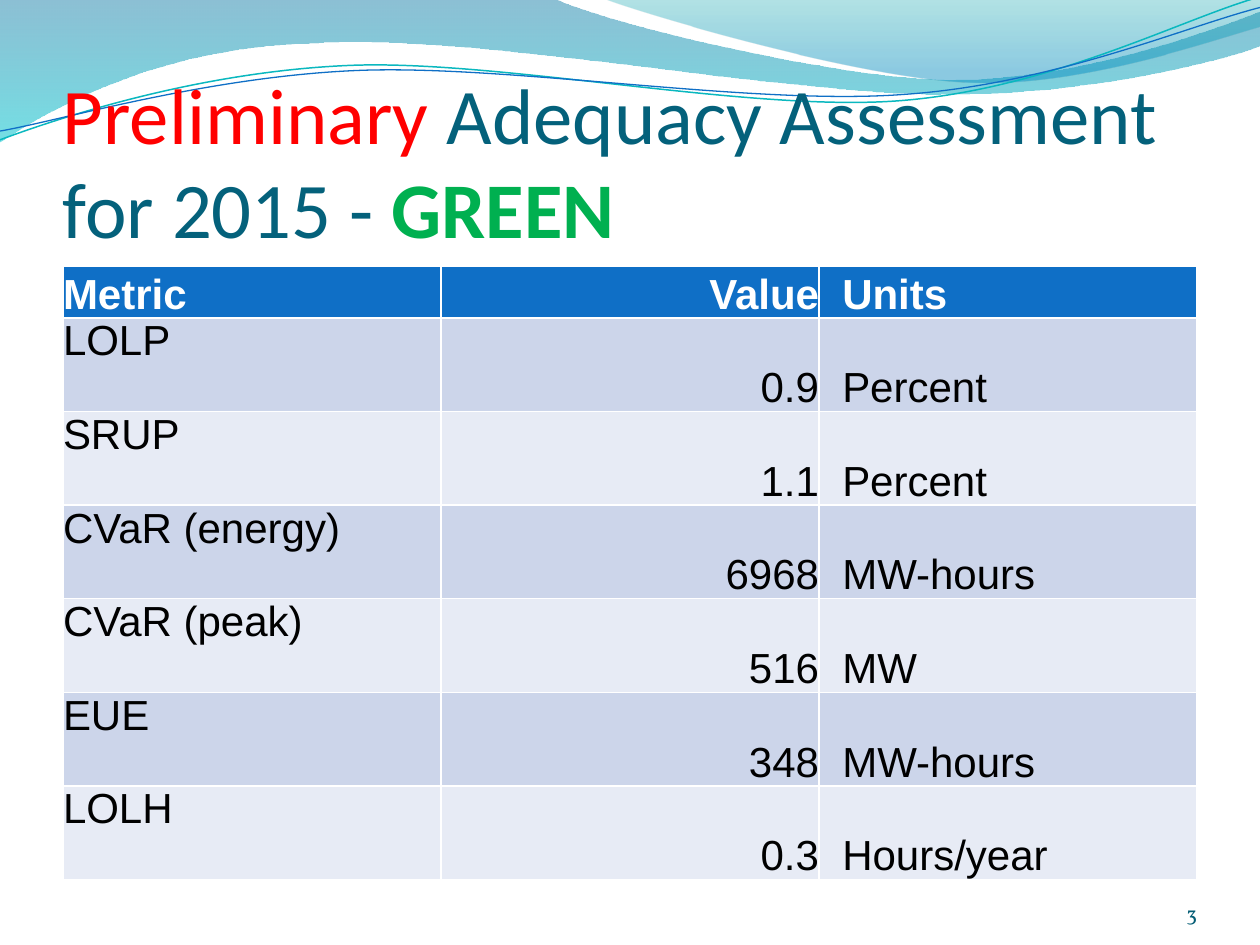
from math import cos, radians, sin

from lxml import etree
from pptx import Presentation
from pptx.dml.color import RGBColor
from pptx.enum.text import MSO_ANCHOR, PP_ALIGN
from pptx.oxml.ns import qn
from pptx.util import Pt

TOP, BOTTOM = MSO_ANCHOR.TOP, MSO_ANCHOR.BOTTOM
LEFT, RIGHT = PP_ALIGN.LEFT, PP_ALIGN.RIGHT
TILT = -2.7

COLORS = {
    "white": "FFFFFF", "black": "000000", "red": "FF0000", "green": "00B050",
    "title": "04617B", "number": "045D75", "head": "0F6FC6",
    "odd": "CCD5EA", "even": "E7EBF5", "teal": "0AB8BF",
    "deep": "0074A1", "aqua": "00C6CF", "sea": "00A1A9", "sky": "008BBF",
}

# Outlines: a start point, then lines (2 numbers) and Bezier curves (6 numbers).
WIDE = [(0, 0), (316.8, -0.7),
        (342.7, 12.2, 478.1, 45.4, 545.8, 45.4),
        (614.2, 45.4, 689.8, 18.7, 720, 6.5), (720.7, 25.9),
        (707.8, 31.7, 626.4, 54.7, 537.1, 54),
        (447.8, 54, 275, 20.2, 185, 24.5),
        (92.9, 25.9, 33.1, 59.8, -0.7, 81.4)]
SMALL = [(344.9, -0.7),
         (366.5, 7.9, 491, 44.6, 553.7, 46.8),
         (616.3, 49.7, 691.9, 23, 720, 15.1), (720, 0)]
UPPER = [(0, 79.9),
         (34.6, 67, 113.8, 41, 199.4, 37.4),
         (284.4, 33.8, 427, 64.1, 513.4, 57.6),
         (599.8, 51.1, 675.4, 10.8, 718.6, -1.4)]
LOWER = [(0, 74.9),
         (33.8, 69.1, 118.1, 43.9, 203.8, 40.3),
         (290.2, 36.7, 429.8, 60.5, 516.2, 54),
         (601.9, 48.2, 677.5, 15.1, 720, 4.3)]

ROWS = [
    ("Metric", "Value", "Units"),
    ("LOLP", "0.9", "Percent"),
    ("SRUP", "1.1", "Percent"),
    ("CVaR (energy)", "6968", "MW-hours"),
    ("CVaR (peak)", "516", "MW"),
    ("EUE", "348", "MW-hours"),
    ("LOLH", "0.3", "Hours/year"),
]


def rgb(name):
    return RGBColor.from_string(COLORS[name])


def level(path, pivot):
    """Turn an outline back by the tilt, so that the shape can carry it."""
    c, s = cos(radians(-TILT)), sin(radians(-TILT))
    px, py = pivot

    def turn(x, y):
        x, y = x - px, y - py
        return px + x * c - y * s, py + x * s + y * c

    return [sum((turn(*part[i:i + 2]) for i in range(0, len(part), 2)), ())
            for part in path]


def add_path(slide, path, close):
    """Lay all points as lines, then join each group of three into a curve."""
    dots = [(Pt(part[i]), Pt(part[i + 1]))
            for part in path for i in range(0, len(part), 2)]
    pen = slide.shapes.build_freeform(*dots[0], scale=1.0)
    pen.add_line_segments(dots[1:], close=close)
    shape = pen.convert_to_shape()
    shape.shadow.inherit = False
    lines = iter(list(shape._element.iter(qn("a:lnTo"))))
    for part in path[1:]:
        first = next(lines)
        if len(part) == 6:
            first.tag = qn("a:cubicBezTo")
            for line in (next(lines), next(lines)):
                first.append(line[0])
                line.getparent().remove(line)
    return shape


def add_band(slide, path, stops):
    """Draw a filled wave; each stop is a position, a colour and an opacity."""
    shape = add_path(slide, path, True)
    shape.line.fill.background()
    fill = shape.fill
    fill.gradient()
    fill.gradient_angle = 270
    for stop, (place, color, _) in zip(fill.gradient_stops, stops):
        stop.position = place
        stop.color.rgb = rgb(color)
    tags = shape._element.spPr.iter(qn("a:srgbClr"))
    for tag, (_, _, alpha) in zip(tags, stops):
        etree.SubElement(tag, qn("a:alpha"), val=str(alpha * 1000))


def add_wave(slide, path, pivot, color, width):
    shape = add_path(slide, level(path, pivot), False)
    shape.rotation = TILT
    shape.fill.background()
    shape.line.color.rgb = rgb(color)
    shape.line.width = Pt(width)


def put_text(frame, text, size, font, color, bold=False, align=LEFT):
    """Append a run to the frame's first paragraph."""
    para = frame.paragraphs[0]
    para.alignment = align
    run = para.add_run()
    run.text = text
    run.font.size = Pt(size)
    run.font.name = font
    run.font.bold = bold
    run.font.color.rgb = rgb(color)


def add_box(slide, left, top, width, height, inset=0):
    box = slide.shapes.add_textbox(Pt(left), Pt(top), Pt(width), Pt(height))
    frame = box.text_frame
    frame.word_wrap = True
    frame.vertical_anchor = BOTTOM
    frame.margin_left = frame.margin_right = frame.margin_bottom = 0
    frame.margin_top = Pt(inset)
    return frame


def add_grid(slide, left, top, width, head, body):
    count, cols = len(ROWS), len(ROWS[0])
    high = head + body * (count - 1)
    table = slide.shapes.add_table(
        count, cols, Pt(left), Pt(top), Pt(width), Pt(high)).table
    for r, texts in enumerate(ROWS):
        table.rows[r].height = Pt(body if r else head)
        shade = ("even", "odd")[r % 2] if r else "head"
        for c, text in enumerate(texts):
            cell = table.cell(r, c)
            cell.margin_right = cell.margin_top = cell.margin_bottom = 0
            cell.margin_left = Pt(13.3 if c == 2 else 0)
            cell.vertical_anchor = TOP if r and c == 0 else BOTTOM
            cell.fill.solid()
            cell.fill.fore_color.rgb = rgb(shade)
            put_text(cell.text_frame, text, 24, "Arial", "black" if r else "white",
                     bold=r == 0, align=RIGHT if c == 1 else LEFT)


def main():
    deck = Presentation()
    deck.slide_width, deck.slide_height = Pt(720), Pt(540)
    slide = deck.slides.add_slide(deck.slide_layouts[6])

    add_band(slide, WIDE, [(0, "deep", 45), (1, "aqua", 55)])
    add_band(slide, SMALL, [(0, "sea", 30), (0.8, "sky", 45)])
    add_wave(slide, UPPER, (359.3, 41.4), "teal", 0.85)
    add_wave(slide, LOWER, (359.6, 42.5), "head", 0.75)

    title = add_box(slide, 36, 55.5, 648, 90, inset=3.6)
    put_text(title, "Preliminary", 45, "Calibri", "red")
    put_text(title, " Adequacy Assessment for 2015 - ", 45, "Calibri", "title")
    put_text(title, "GREEN", 45, "Calibri", "green", bold=True)

    add_grid(slide, 36, 152.4, 648, head=29.3, body=53.5)

    number = add_box(slide, 624, 500.3, 60, 28.8)
    put_text(number, "3", 12, "Vollkorn", "number", align=RIGHT)
    deck.save("out.pptx")


if __name__ == "__main__":
    main()
